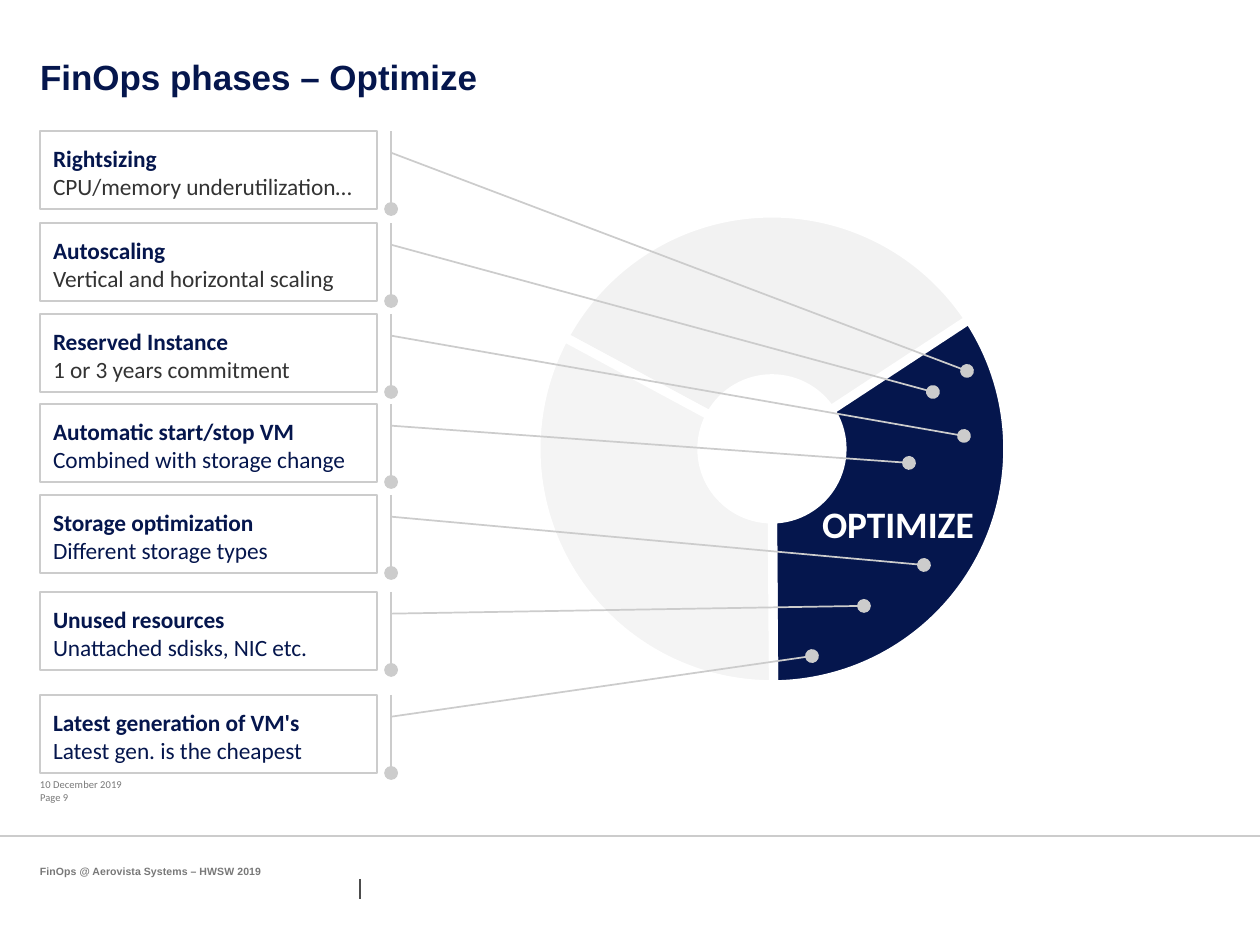
from lxml import etree
from pptx import Presentation, util as u
from pptx.dml.color import RGBColor
from pptx.enum import shapes, text
from pptx.oxml.ns import qn

# Content
NAVY, DARK, GREY, SILVER, WHITE = "05164D", "333333", "787878", "CCCCCC", "FFFFFF"
TITLE = "FinOps phases – Optimize"
# heading, detail, detail colour, box top, point on the wheel
MEASURES = [
    ("Rightsizing", "CPU/memory underutilization…", DARK, 131, (967, 371)),
    ("Autoscaling", "Vertical and horizontal scaling", DARK, 223, (933, 392)),
    ("Reserved Instance", "1 or 3 years commitment", DARK, 314, (964, 436)),
    ("Automatic start/stop VM", "Combined with storage change", NAVY, 404, (909, 463)),
    ("Storage optimization", "Different storage types", NAVY, 495, (924, 565)),
    ("Unused resources", "Unattached sdisks, NIC etc.", NAVY, 592, (864, 606)),
    ("Latest generation of VM's", "Latest gen. is the cheapest", NAVY, 695, (812, 656)),
]
# start and end angle (clockwise from the right), fill, opacity in %
PHASES = [
    (299, 89.6, NAVY, 100),
    (208.3, 326.7, "F2F2F2", 100),
    (89.6, 208.3, "999999", 10),
]
# text, box, wrap, format
LABELS = [
    ("FinOps @ Aerovista Systems – HWSW 2019", (40, 865, 297, 13), True,
     dict(size=4.5, name="Arial", color=GREY, bold=True)),
    ("10 December 2019", (40, 778, 89, 13), False,
     dict(size=4.5, name="Calibri", color=GREY)),
    ("Page 9", (40, 791, 37, 13), False,
     dict(size=4.5, name="Calibri", color=GREY)),
]
# start, end, colour
RULES = [((360, 879), (360, 899), "4D4D4D"), ((0, 836), (1260, 836), SILVER)]
WHEEL_CENTRE, WHEEL_RADIUS, HUB_RADIUS = (772, 449), 236, 70
BOX_LEFT, BOX_WIDTH, BOX_HEIGHT, BOX_INSET = 40, 337, 78, 13
BAR_X, LEADER_Y = 1.042, 0.279


def px(*lengths):
    return [u.Emu(round(length * 914400 / 168)) for length in lengths]


def rgb(value):
    return RGBColor.from_string(value)


def format_run(paragraph, words, color, size, **values):
    run = paragraph.add_run()
    run.text = words
    run.font.color.rgb = rgb(color)
    for key, value in dict(values, size=u.Pt(size)).items():
        setattr(run.font, key, value)


def format_frame(frame, wrap, anchor, inset=0):
    margins = {f"margin_{side}": px(inset)[0] for side in ("left", "top", "right", "bottom")}
    for key, value in dict(margins, word_wrap=wrap, vertical_anchor=anchor,
                           auto_size=text.MSO_AUTO_SIZE.NONE).items():
        setattr(frame, key, value)
    return frame


def add_shape(kind, box, adjustments, fill, line, width):
    shape = slide.shapes.add_shape(kind, *px(*box))
    shape.shadow.inherit = False
    for index, value in enumerate(adjustments):
        shape.adjustments[index] = value
    if fill:
        shape.fill.solid()
        shape.fill.fore_color.rgb = rgb(fill)
    else:
        shape.fill.background()
    shape.line.color.rgb = rgb(line)
    shape.line.width = u.Pt(width)
    return shape


presentation = Presentation()
presentation.slide_width, presentation.slide_height = px(1260, 945)
slide = presentation.slides.add_slide(presentation.slide_layouts[5])
preset = shapes.MSO_SHAPE

# Title
title = slide.shapes.title
title.left, title.top, title.width, title.height = px(40, 55, 1171, 106)
paragraph = format_frame(title.text_frame, True, text.MSO_ANCHOR.TOP).paragraphs[0]
paragraph.alignment = text.PP_ALIGN.LEFT
format_run(paragraph, TITLE, NAVY, 15, name="Arial", bold=True)

# Footer rules
for start, end, color in RULES:
    rule = slide.shapes.add_connector(shapes.MSO_CONNECTOR.STRAIGHT, *px(*start, *end))
    rule.line.color.rgb = rgb(color)
    rule.line.width = u.Pt(0.5)
    etree.SubElement(rule.line._get_or_add_ln().getparent(), qn("a:effectLst"))

# Footer labels
for words, box, wrap, values in LABELS:
    label = slide.shapes.add_textbox(*px(*box))
    frame = format_frame(label.text_frame, wrap, text.MSO_ANCHOR.MIDDLE)
    format_run(frame.paragraphs[0], words, **values)

# Phase wheel
diameter = 2 * WHEEL_RADIUS
wheel_box = (*(middle - WHEEL_RADIUS for middle in WHEEL_CENTRE), diameter, diameter)
ring_share = (WHEEL_RADIUS - HUB_RADIUS) / diameter
for start, end, fill, opacity in PHASES:
    # angles: 60000 units a degree, stored per 100000
    wedge = add_shape(preset.BLOCK_ARC, wheel_box, (start * 0.6, end * 0.6, ring_share),
                      fill, WHITE, 4)
    if opacity < 100:
        color = wedge.fill._xPr.find(qn("a:solidFill"))[0]
        etree.SubElement(color, qn("a:alpha"), val=str(opacity * 1000))

phase_label = slide.shapes.add_textbox(*px(797, 493, 202, 62))
phase_label.text_frame.word_wrap = False
paragraph = phase_label.text_frame.paragraphs[0]
paragraph.alignment = text.PP_ALIGN.CENTER
format_run(paragraph, "OPTIMIZE", WHITE, 16, name="Calibri", bold=True)

# Measures with leaders to the wheel
for heading, detail, detail_color, top, (x, y) in MEASURES:
    leader = (LEADER_Y, BAR_X, (y - top) / BOX_HEIGHT, (x - BOX_LEFT) / BOX_WIDTH)
    callout = add_shape(preset.LINE_CALLOUT_1_BORDER_AND_ACCENT_BAR,
                        (BOX_LEFT, top, BOX_WIDTH, BOX_HEIGHT), leader, None, SILVER, 0.75)
    etree.SubElement(callout.line._get_or_add_ln(), qn("a:tailEnd"), type="oval")
    frame = format_frame(callout.text_frame, True, text.MSO_ANCHOR.TOP, BOX_INSET)
    lines = [(frame.paragraphs[0], heading, NAVY, True),
             (frame.add_paragraph(), detail, detail_color, False)]
    for paragraph, words, color, bold in lines:
        paragraph.alignment = text.PP_ALIGN.LEFT
        format_run(paragraph, words, color, 10, name="Calibri", bold=bold)

presentation.save("out.pptx")
